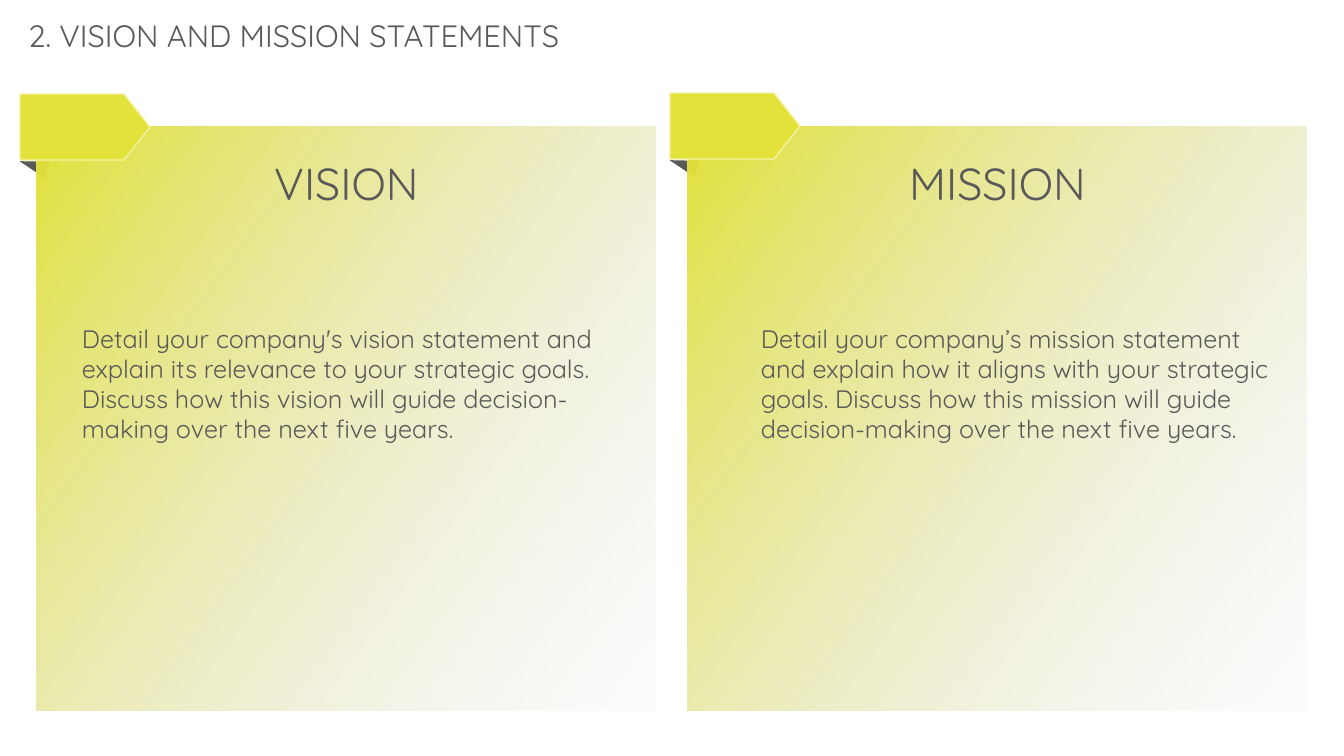
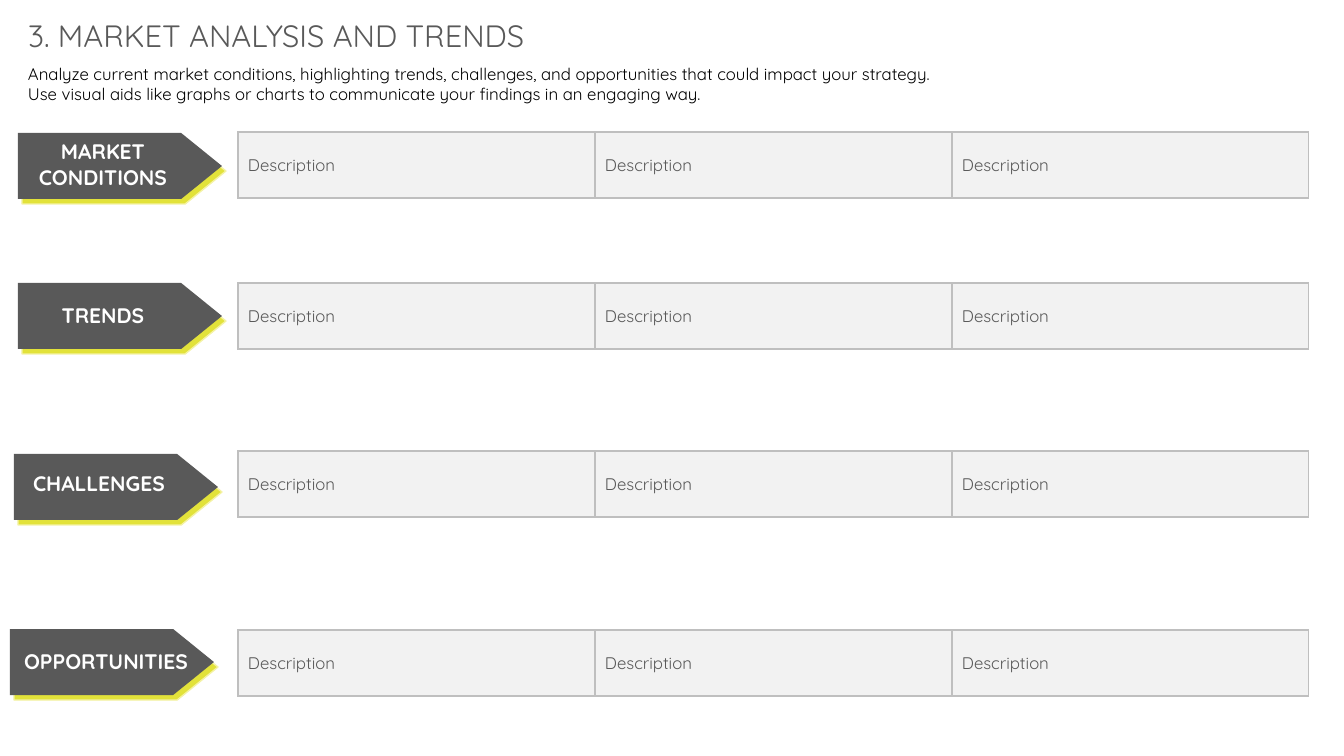
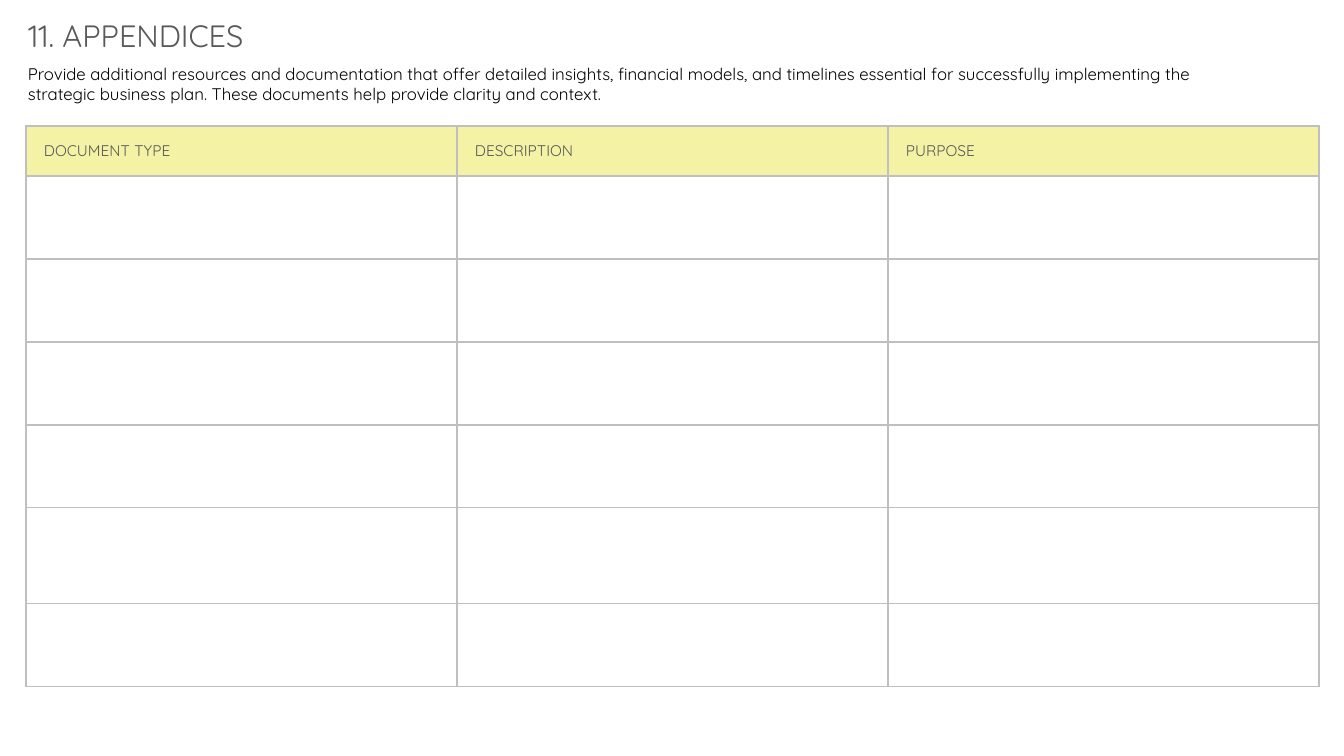
from lxml.etree import SubElement
from pptx import Presentation
from pptx.dml.color import RGBColor
from pptx.enum.shapes import MSO_SHAPE
from pptx.enum.text import MSO_ANCHOR, MSO_AUTO_SIZE, PP_ALIGN
from pptx.oxml import parse_xml
from pptx.oxml.ns import nsdecls, qn
from pptx.util import Emu, Pt

FONT = "Quicksand"
GRAY, LIME, PALE = "595959", "E2E23A", "F4F2A4"
RULE, MIST, WHITE, BLACK = "BFBFBF", "F2F2F2", "FFFFFF", "000000"

VISION = "2. VISION AND MISSION STATEMENTS"
CARDS = [
    dict(head="VISION", left=37, tab=(20, 94), text=72,
         body="Detail your company's vision statement and explain its relevance "
              "to your strategic goals. Discuss how this vision will guide "
              "decision-making over the next five years."),
    dict(head="MISSION", left=688, tab=(670, 93), text=751,
         body="Detail your company’s mission statement and explain how it aligns "
              "with your strategic goals. Discuss how this mission will guide "
              "decision-making over the next five years."),
]

MARKET = "3. MARKET ANALYSIS AND TRENDS"
MARKET_INTRO = (
    "Analyze current market conditions, highlighting trends, challenges, and "
    "opportunities that could impact your strategy. Use visual aids like graphs "
    "or charts to communicate your findings in an engaging way.")
TOPICS = [
    dict(name="MARKET CONDITIONS", arrow=(18, 133), label=134, wide=162, grid=132),
    dict(name="TRENDS", arrow=(18, 283), label=298, wide=162, grid=283),
    dict(name="CHALLENGES", arrow=(14, 454), label=466, wide=162, grid=451),
    dict(name="OPPORTUNITIES", arrow=(10, 629), label=644, wide=184, grid=630),
]

APPENDIX = "11. APPENDICES"
APPENDIX_INTRO = (
    "Provide additional resources and documentation that offer detailed insights, "
    "financial models, and timelines essential for successfully implementing the "
    "strategic business plan. These documents help provide clarity and context.")
HEADS = ["DOCUMENT TYPE", "DESCRIPTION", "PURPOSE"]
ROWS = [50, 83, 83, 83, 83, 96, 83]

GRAD = (
    f'<a:gradFill {nsdecls("a")} rotWithShape="1"><a:gsLst>'
    f'<a:gs pos="0"><a:srgbClr val="{LIME}"/></a:gs>'
    '<a:gs pos="100000"><a:srgbClr val="D9D9D9"><a:alpha val="6000"/></a:srgbClr></a:gs>'
    '</a:gsLst><a:lin ang="2160000" scaled="0"/></a:gradFill>')


def px(n):
    return Emu(round(n * 914400 / 100.8))


def color(code):
    return RGBColor.from_string(code)


def style(para, size, code, bold=False, align=PP_ALIGN.LEFT):
    para.alignment = align
    font = para.font
    font.name, font.size, font.bold = FONT, Pt(size), bold
    font.color.rgb = color(code)


def write(slide, text, box, size, code=GRAY, bold=False, align=PP_ALIGN.LEFT):
    frame = slide.shapes.add_textbox(*map(px, box)).text_frame
    frame.word_wrap = True
    frame.text = text
    style(frame.paragraphs[0], size, code, bold, align)


def shape(slide, kind, box, fill=None, line=None, turn=0):
    item = slide.shapes.add_shape(kind, *map(px, box))
    item.shadow.inherit = False
    item.rotation = turn
    if fill:
        item.fill.solid()
        item.fill.fore_color.rgb = color(fill)
    if line:
        item.line.color.rgb = color(line)
        item.line.width = Pt(1)
    else:
        item.line.fill.background()
    return item


def arrow(slide, left, top, wide, fill, line=None, high=66):
    shift = (wide - high) / 2
    box = (left + shift, top - shift, high, wide)
    shape(slide, MSO_SHAPE.FLOWCHART_OFFPAGE_CONNECTOR, box, fill, line, 270)


def border(cell):
    props = cell._tc.get_or_add_tcPr()
    for side in ("lnL", "lnR", "lnT", "lnB"):
        line = SubElement(props, qn(f"a:{side}"), w="12700")
        fill = SubElement(line, qn("a:solidFill"))
        SubElement(fill, qn("a:srgbClr"), val=RULE)


def grid(slide, left, top, col, rows, heads, fill, size, inset):
    box = (left, top, col * len(heads), sum(rows))
    table = slide.shapes.add_table(len(rows), len(heads), *map(px, box)).table
    table.first_row = table.horz_banding = False
    for part in table.columns:
        part.width = px(col)
    for part, high in zip(table.rows, rows):
        part.height = px(high)
    for cell in table.iter_cells():
        border(cell)
        cell.fill.background()
    for cell, head in zip(table.rows[0].cells, heads):
        cell.fill.solid()
        cell.fill.fore_color.rgb = color(fill)
        cell.vertical_anchor = MSO_ANCHOR.MIDDLE
        cell.margin_left = px(inset)
        cell.text = head
        style(cell.text_frame.paragraphs[0], size, GRAY)


def page(deck, name, intro=None, wide=0):
    slide = deck.slides.add_slide(deck.slide_layouts[5])
    title = slide.shapes.title
    title.left, title.top, title.width, title.height = map(px, (18, 12, 638, 47))
    frame = title.text_frame
    frame.text = name
    frame.word_wrap = True
    frame.auto_size = MSO_AUTO_SIZE.NONE
    frame.vertical_anchor = MSO_ANCHOR.TOP
    style(frame.paragraphs[0], 22, GRAY)
    if intro:
        write(slide, intro, (18, 59, wide, 50), 12, BLACK)
    return slide


def vision(deck):
    slide = page(deck, VISION)
    for card in CARDS:
        left, top = card["tab"]
        fold = (left + 5, top + 57, 17, 29)
        shape(slide, MSO_SHAPE.ISOSCELES_TRIANGLE, fold, GRAY, turn=287.6)
    for card in CARDS:
        left = card["left"]
        panel = shape(slide, MSO_SHAPE.RECTANGLE, (left, 127, 619, 584))
        panel._element.spPr.find(qn("a:prstGeom")).addnext(parse_xml(GRAD))
        arrow(slide, *card["tab"], 130, LIME, PALE)
        write(slide, card["head"], (left, 151, 619, 65), 32, align=PP_ALIGN.CENTER)
        write(slide, card["body"], (card["text"], 318, 530, 163), 18)


def market(deck):
    slide = page(deck, MARKET, MARKET_INTRO, 929)
    for topic in TOPICS:
        left, top = topic["arrow"]
        arrow(slide, left + 4, top + 5, 204, LIME, PALE)
        arrow(slide, left, top, 204, GRAY)
        box = (left + 4, topic["label"], topic["wide"], 35)
        write(slide, topic["name"], box, 15, WHITE, True, PP_ALIGN.CENTER)
        grid(slide, 238, topic["grid"], 357, [66], ["Description"] * 3, MIST, 12, 10)


def appendix(deck):
    slide = page(deck, APPENDIX, APPENDIX_INTRO, 1216)
    grid(slide, 26, 126, 431, ROWS, HEADS, PALE, 11, 18)


def main():
    deck = Presentation()
    deck.slide_width, deck.slide_height = px(1344), px(756)
    for build in (vision, market, appendix):
        build(deck)
    deck.save("out.pptx")


if __name__ == "__main__":
    main()
